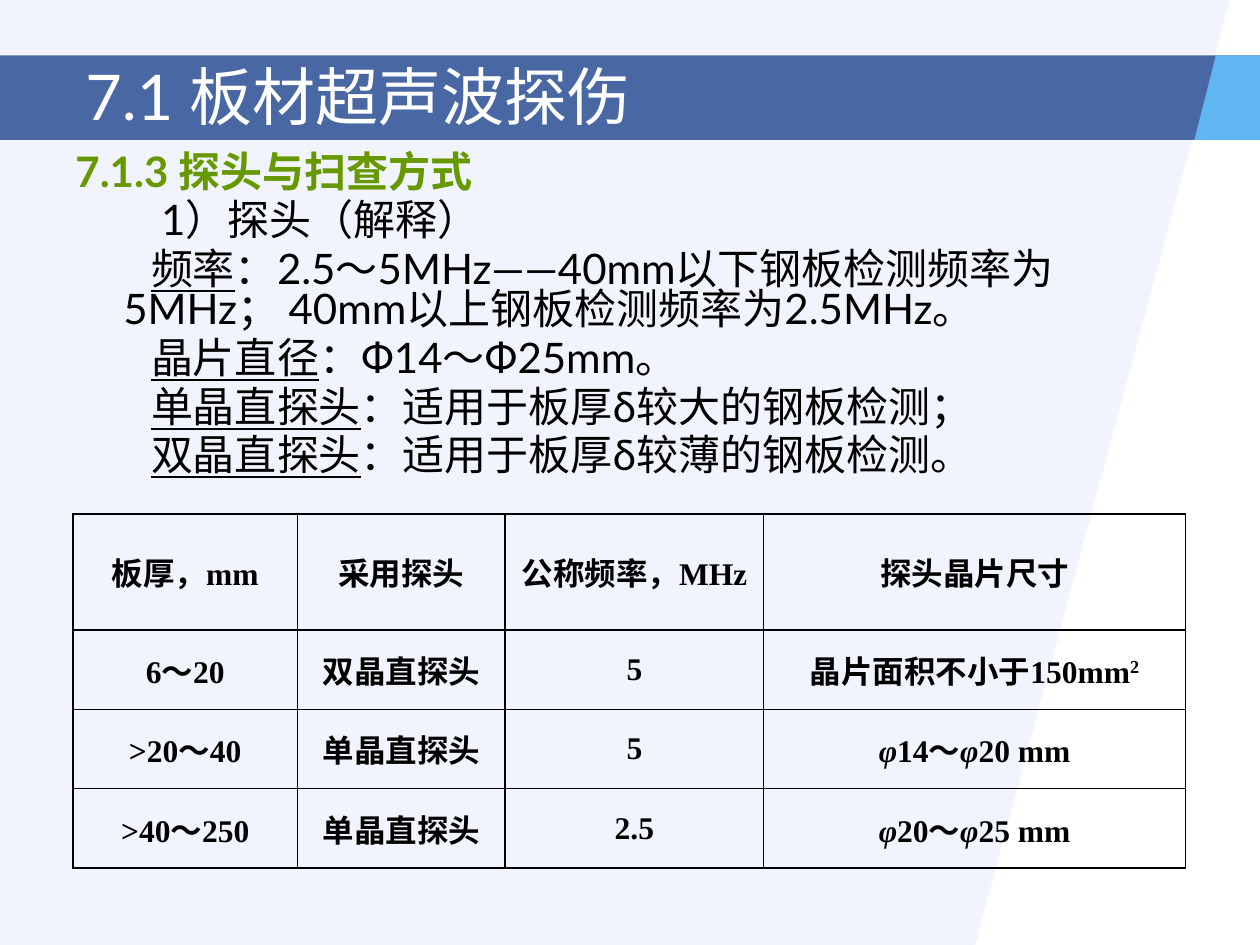
import pptx
import pptx.util
import pptx.dml.color
import pptx.enum.shapes
import pptx.enum.text
import pptx.oxml
import pptx.oxml.ns

HUES = {"pale": "94B1EC", "navy": "173D89", "sky": "5FB6F1",
        "white": "FFFFFF", "green": "669900", "black": "000000"}
COLS, ROWS = 100, 75
HANG = 3.8
MID = pptx.enum.text.MSO_ANCHOR.MIDDLE
MARK = {"italic": True}
LINE = {"underline": True}


class Deck:
    def __init__(self, wide, high):
        self.prs = pptx.Presentation()
        self.prs.slide_width = pptx.util.Inches(wide)
        self.prs.slide_height = pptx.util.Inches(high)
        self.unit = self.prs.slide_width / COLS
        self.slide = self.prs.slides.add_slide(self.prs.slide_layouts[6])
        self.title = {"name": "Lato", "size": pptx.util.Pt(36), "hue": "white"}
        self.body = {"name": "Lato", "size": pptx.util.Pt(24), "hue": "black"}
        self.cell = {"name": "Times New Roman", "size": pptx.util.Pt(18),
                     "bold": True, "hue": "black"}

    def span(self, *cells):
        return [pptx.util.Emu(round(c * self.unit)) for c in cells]

    def paint(self, shape, hue, share=100):
        shape.shadow.inherit = False
        shape.line.fill.background()
        shape.fill.solid()
        shape.fill.fore_color.rgb = pptx.dml.color.RGBColor.from_string(HUES[hue])
        if share < 100:
            tone = shape._element.spPr.find(".//" + pptx.oxml.ns.qn("a:srgbClr"))
            tone.append(pptx.oxml.parse_xml(
                f'<a:alpha {pptx.oxml.ns.nsdecls("a")} val="{share * 1000}"/>'))

    def band(self, box, hue, share=100):
        kind = pptx.enum.shapes.MSO_SHAPE.RECTANGLE
        self.paint(self.slide.shapes.add_shape(kind, *self.span(*box)), hue, share)

    def shard(self, points, hue, share=100):
        spots = [self.span(*p) for p in points]
        form = self.slide.shapes.build_freeform(*spots[0])
        form.add_line_segments(spots[1:], close=True)
        self.paint(form.convert_to_shape(), hue, share)

    def fill(self, para, runs, style):
        for text, extra in runs:
            run = para.add_run()
            run.text = text
            for key, value in {**style, **extra}.items():
                if key == "hue":
                    run.font.color.rgb = pptx.dml.color.RGBColor.from_string(HUES[value])
                elif key == "raise":
                    run._r.get_or_add_rPr().set("baseline", str(value * 1000))
                else:
                    setattr(run.font, key, value)

    def indent(self, para, first):
        left, shift = self.span(HANG, first)
        props = para._p.get_or_add_pPr()
        props.set("marL", str(left))
        props.set("indent", str(shift))

    def text(self, box, paras, style, form, anchor=None):
        frame = self.slide.shapes.add_textbox(*self.span(*box)).text_frame
        frame.word_wrap = True
        if anchor is not None:
            frame.vertical_anchor = anchor
        for n, (first, runs) in enumerate(paras):
            para = frame.add_paragraph() if n else frame.paragraphs[0]
            if first is not None:
                self.indent(para, first)
            for key, value in form.items():
                if n or key != "space_before":
                    setattr(para, key, value)
            self.fill(para, runs, style)

    def frame(self, cell):
        props = cell._tc.get_or_add_tcPr()
        for side in "LRTB":
            props.append(pptx.oxml.parse_xml(
                f'<a:ln{side} {pptx.oxml.ns.nsdecls("a")} w="12700"><a:solidFill>'
                f'<a:srgbClr val="{HUES["black"]}"/></a:solidFill></a:ln{side}>'))
        cell.fill.background()

    def table(self, spot, wides, highs, rows):
        size = self.span(*spot, sum(wides), sum(highs))
        grid = self.slide.shapes.add_table(len(highs), len(wides), *size).table
        grid.first_row = grid.horz_banding = False
        for col, wide in zip(grid.columns, self.span(*wides)):
            col.width = wide
        for row, high, data in zip(grid.rows, self.span(*highs), rows):
            row.height = high
            for cell, item in zip(row.cells, data):
                self.frame(cell)
                cell.vertical_anchor = MID
                para = cell.text_frame.paragraphs[0]
                para.alignment = pptx.enum.text.PP_ALIGN.CENTER
                self.indent(para, -HANG)
                runs = [(item, {})] if isinstance(item, str) else item
                self.fill(para, runs, self.cell)


def sizes(low, high):
    return [("φ", MARK), (f"{low}～", {}), ("φ", MARK), (f"{high} mm", {})]


def main():
    deck = Deck(10, 7.5)
    top, base = 4.4, 11.1
    deck.shard([(0, 0), (97.6, 0), (77.4, ROWS), (0, ROWS)], "pale", 13)
    deck.band((0, top, COLS, base - top), "navy", 77)
    deck.shard([(96.5, top), (94.8, base), (COLS, base), (COLS, top)], "sky")
    deck.text((5.8, 4.5, 90, 6.2), [(None, [("7.1 板材超声波探伤", {})])],
              deck.title, {}, MID)

    facts = [
        ("频率", "：2.5～5MHz——40mm以下钢板检测频率为5MHz； 40mm以上钢板检测频率为2.5MHz。"),
        ("晶片直径", "：Ф14～Ф25mm。"),
        ("单晶直探头", "：适用于板厚δ较大的钢板检测；"),
        ("双晶直探头", "：适用于板厚δ较薄的钢板检测。"),
    ]
    paras = [(-HANG, [("7.1.3 探头与扫查方式", {"hue": "green", "bold": True})]),
             (3, [("1）探头（解释）", {})])]
    paras += [(2.2, [(term, LINE), (rest, {})]) for term, rest in facts]
    deck.text((5, 11.8, 90.8, 57.4), paras, deck.body,
              {"line_spacing": 0.8, "space_before": pptx.util.Pt(4.8)})

    deck.table((5.8, 40.8), (17.8, 16.5, 20.5, 33.5), (9.2, 6.3, 6.3, 6.3), [
        ("板厚，mm", "采用探头", "公称频率，MHz", "探头晶片尺寸"),
        ("6～20", "双晶直探头", "5", [("晶片面积不小于150mm", {}), ("2", {"raise": 30})]),
        (">20～40", "单晶直探头", "5", sizes(14, 20)),
        (">40～250", "单晶直探头", "2.5", sizes(20, 25)),
    ])
    deck.prs.save("out.pptx")


if __name__ == "__main__":
    main()
